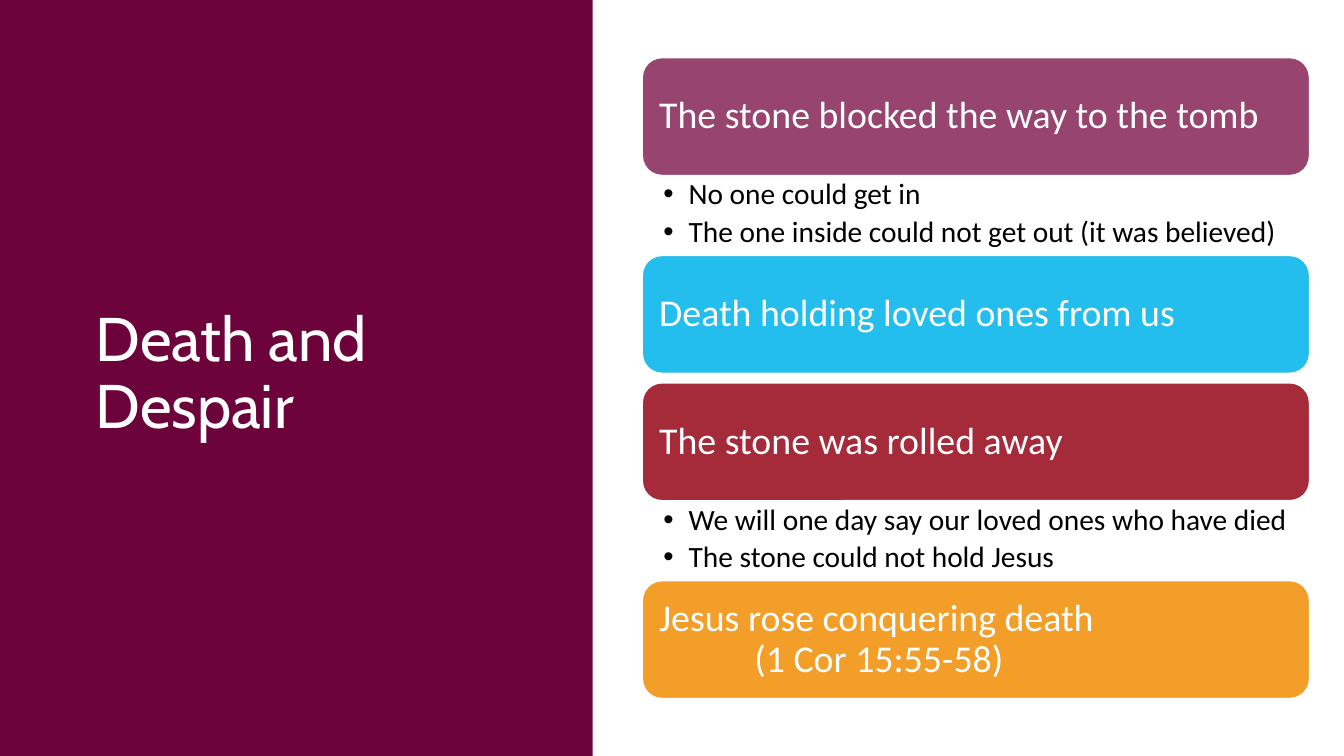
from lxml.etree import SubElement
from pptx import Presentation
from pptx.dml.color import RGBColor
from pptx.enum.shapes import MSO_SHAPE
from pptx.enum.text import MSO_ANCHOR
from pptx.oxml.ns import qn
from pptx.util import Pt

COLORS = {
    "wine": "6C033B",
    "plum": "97446E",
    "sky": "24BEEE",
    "red": "A52B3A",
    "orange": "F39E29",
    "white": "FFFFFF",
    "black": "000000",
}
SLIDE_WIDTH, SLIDE_HEIGHT = 960, 540
LIST_LEFT, LIST_TOP, LIST_WIDTH = 458.8, 41.2, 476.6
CARD_HEIGHT, BULLETS_HEIGHT, CARD_GAP = 84.2, 57.1, 6.8
REFERENCE_INDENT = 68

SECTIONS = [
    ("plum", ["The stone blocked the way to the tomb"],
     ["No one could get in",
      "The one inside could not get out (it was believed)"]),
    ("sky", ["Death holding loved ones from us"], []),
    ("red", ["The stone was rolled away"],
     ["We will one day say our loved ones who have died",
      "The stone could not hold Jesus"]),
    ("orange", ["Jesus rose conquering death", "(1 Cor 15:55-58)"], []),
]


def color(name):
    return RGBColor.from_string(COLORS[name])


def add_box(slide, kind, left, top, width, height, fill, line=None):
    shape = slide.shapes.add_shape(kind, Pt(left), Pt(top), Pt(width), Pt(height))
    shape.shadow.inherit = False
    shape.fill.solid()
    shape.fill.fore_color.rgb = color(fill)
    if line:
        shape.line.color.rgb = color(line)
        shape.line.width = Pt(1)
    else:
        shape.line.fill.background()
    return shape


def prepare_frame(shape, horizontal, vertical, anchor):
    frame = shape.text_frame
    frame.word_wrap = True
    frame.margin_left = frame.margin_right = Pt(horizontal)
    frame.margin_top = frame.margin_bottom = Pt(vertical)
    frame.vertical_anchor = anchor
    return frame


def write_lines(frame, lines, font, size, text_color, space_after=0):
    for number, text in enumerate(lines):
        paragraph = frame.add_paragraph() if number else frame.paragraphs[0]
        paragraph.line_spacing = 0.9
        paragraph.space_after = Pt(space_after)
        run = paragraph.add_run()
        run.text = text
        run.font.name = font
        run.font.size = Pt(size)
        run.font.color.rgb = color(text_color)


def indent_paragraph(paragraph, left, first_line=0, bullet=None):
    properties = paragraph._p.get_or_add_pPr()
    properties.set("marL", str(Pt(left)))
    properties.set("indent", str(Pt(first_line)))
    properties.set("algn", "l")
    if bullet:
        SubElement(properties, qn("a:buFont"), typeface="Arial")
        SubElement(properties, qn("a:buChar"), char=bullet)


def add_title(slide, text):
    box = slide.shapes.add_textbox(Pt(61.2), Pt(38.9), Pt(311), Pt(457.9))
    frame = prepare_frame(box, 7.2, 3.6, MSO_ANCHOR.MIDDLE)
    write_lines(frame, [text], "Cabin", 44, "white")


def add_card(slide, top, fill, lines):
    card = add_box(slide, MSO_SHAPE.ROUNDED_RECTANGLE, LIST_LEFT, top,
                   LIST_WIDTH, CARD_HEIGHT, fill, "white")
    frame = prepare_frame(card, 8, 8, MSO_ANCHOR.MIDDLE)
    write_lines(frame, lines, "Calibri", 27, "white")
    for number, paragraph in enumerate(frame.paragraphs):
        indent_paragraph(paragraph, number * REFERENCE_INDENT)


def add_bullets(slide, top, lines):
    box = slide.shapes.add_textbox(Pt(LIST_LEFT), Pt(top), Pt(LIST_WIDTH), Pt(BULLETS_HEIGHT))
    frame = prepare_frame(box, 15.1, 2.9, MSO_ANCHOR.TOP)
    write_lines(frame, lines, "Calibri", 21, "black", 4.2)
    for paragraph in frame.paragraphs:
        indent_paragraph(paragraph, 18, -18, "•")


def main():
    presentation = Presentation()
    presentation.slide_width = Pt(SLIDE_WIDTH)
    presentation.slide_height = Pt(SLIDE_HEIGHT)
    slide = presentation.slides.add_slide(presentation.slide_layouts[6])
    panel_width = 423.4
    add_box(slide, MSO_SHAPE.RECTANGLE, 0, 0, SLIDE_WIDTH, SLIDE_HEIGHT, "wine")
    add_title(slide, "Death and Despair")
    add_box(slide, MSO_SHAPE.RECTANGLE, panel_width, 0,
            SLIDE_WIDTH - panel_width, SLIDE_HEIGHT, "white")
    top = LIST_TOP
    for fill, heading, bullets in SECTIONS:
        add_card(slide, top, fill, heading)
        top += CARD_HEIGHT
        if bullets:
            add_bullets(slide, top, bullets)
            top += BULLETS_HEIGHT
        else:
            top += CARD_GAP
    presentation.save("out.pptx")


if __name__ == "__main__":
    main()
